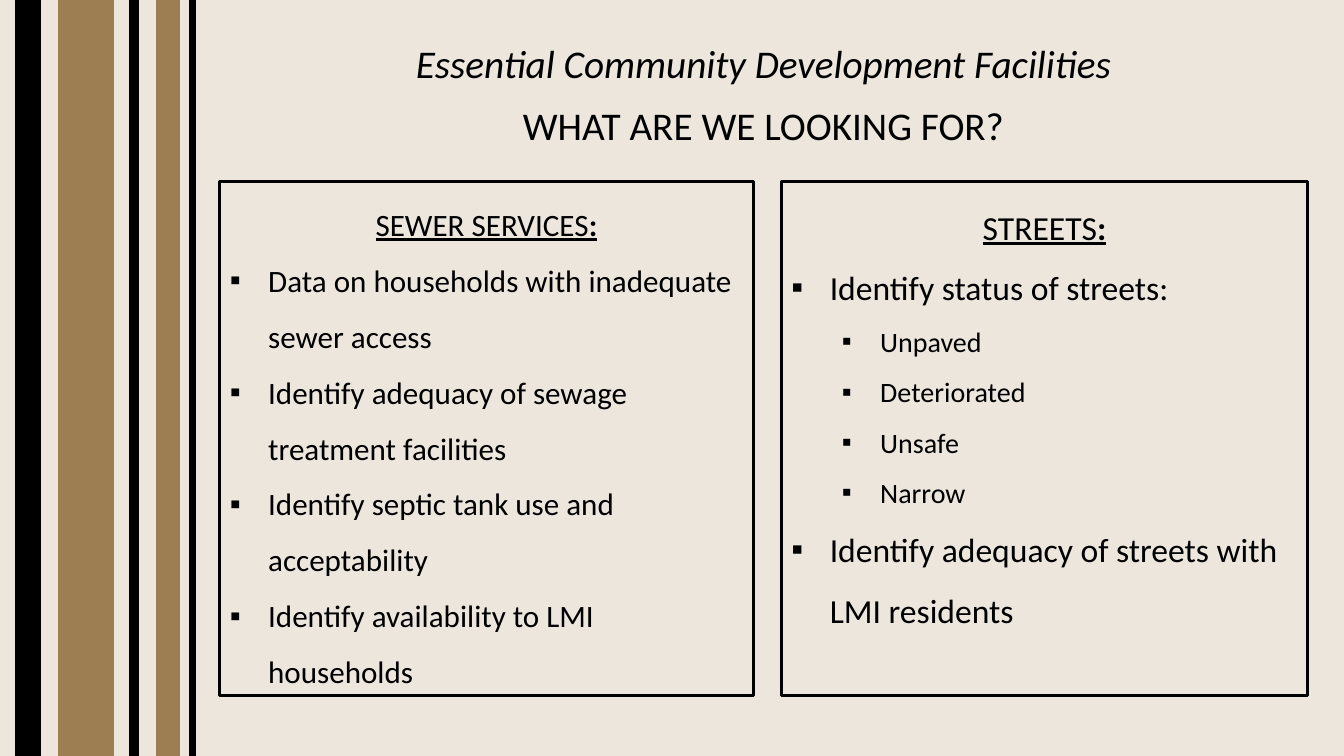
from lxml.etree import SubElement
from pptx import Presentation
from pptx.dml.color import RGBColor
from pptx.enum.shapes import MSO_SHAPE as SHAPE
from pptx.enum.text import MSO_ANCHOR as ANCHOR, MSO_AUTO_SIZE as AUTO, PP_ALIGN as ALIGN
from pptx.oxml.ns import qn
from pptx.util import Pt

PX = 9144  # 100 px to the inch
BLACK, TAN, CREAM = "000000", "9C7E52", "ECE6DD"

BARS = [(16, 24, BLACK), (58, 54, TAN), (129, 8, BLACK), (155, 23, TAN), (188, 6, BLACK)]
TITLE = "Essential Community Development Facilities"
SUBTITLE = "WHAT ARE WE LOOKING FOR?"
TITLE_BOX = (218, 28, 1078, 63)
SUBTITLE_BOX = (218, 90, 1078, 63)
# box, heading, size of each level, items as (level, text)
PANELS = [
    ((218, 180, 529, 510), "SEWER SERVICES", (22.2,), [
        (0, "Data on households with inadequate sewer access"),
        (0, "Identify adequacy of sewage treatment facilities"),
        (0, "Identify septic tank use and acceptability"),
        (0, "Identify availability to LMI households"),
    ]),
    ((775, 180, 522, 510), "STREETS", (24, 20), [
        (0, "Identify status of streets:"),
        (1, "Unpaved"),
        (1, "Deteriorated"),
        (1, "Unsafe"),
        (1, "Narrow"),
        (0, "Identify adequacy of streets with LMI residents"),
    ]),
]


def rgb(color):
    return RGBColor.from_string(color)


def place(s, box):
    s.left, s.top, s.width, s.height = (v * PX for v in box)


def add_run(p, text, size, bold=False, italic=False, underline=False):
    r = p.add_run()
    r.text = text
    f = r.font
    f.name, f.size, f.bold, f.italic, f.underline = "Calibri", Pt(size), bold, italic, underline
    f.color.rgb = rgb(BLACK)


def set_paragraph(p, spacing, align=ALIGN.LEFT):
    p.alignment, p.line_spacing = align, spacing
    p.space_before = p.space_after = Pt(0)


def set_bullet(p, char=None, indent=0, hanging=0):
    """Set bullet and indents in px; without a char the bullet is removed."""
    pPr = p._p.get_or_add_pPr()
    pPr.set("marL", str(indent * PX))
    pPr.set("indent", str(-hanging * PX))
    if char:
        SubElement(pPr, qn("a:buFont")).set("typeface", "Arial")
        SubElement(pPr, qn("a:buChar")).set("char", char)
    else:
        SubElement(pPr, qn("a:buNone"))


def prepare_frame(s, anchor):
    tf = s.text_frame
    tf.word_wrap, tf.auto_size, tf.vertical_anchor = True, AUTO.NONE, anchor
    return tf


def fill_title(s, box, text, italic=False):
    place(s, box)
    p = prepare_frame(s, ANCHOR.BOTTOM).paragraphs[0]
    set_paragraph(p, 0.9, ALIGN.CENTER)
    add_run(p, text, 28, italic=italic)


def fill_panel(s, box, heading, sizes, items):
    place(s, box)
    s.line.color.rgb, s.line.width = rgb(BLACK), Pt(2.25)
    tf = prepare_frame(s, ANCHOR.TOP)
    p = tf.paragraphs[0]
    set_paragraph(p, 1.5, ALIGN.CENTER)
    set_bullet(p)
    add_run(p, heading, sizes[0], underline=True)
    add_run(p, ":", sizes[0], bold=True, underline=True)
    for level, text in items:
        p = tf.add_paragraph()
        p.level = level
        set_paragraph(p, 1.5)
        set_bullet(p, "▪", 38 + 50 * level, 38)
        add_run(p, text, sizes[level])


def add_bar(slide, left, width, color):
    s = slide.shapes.add_shape(SHAPE.RECTANGLE, left * PX, 0, width * PX, 750 * PX)
    s.shadow.inherit = False
    s.fill.solid()
    s.fill.fore_color.rgb = s.line.color.rgb = rgb(color)
    s.line.width = Pt(1)


def main():
    prs = Presentation()
    prs.slide_width, prs.slide_height = 1333 * PX, 750 * PX
    slide = prs.slides.add_slide(prs.slide_layouts.get_by_name("Two Content"))
    slide.background.fill.solid()
    slide.background.fill.fore_color.rgb = rgb(CREAM)
    for bar in BARS:
        add_bar(slide, *bar)
    title, *bodies = slide.placeholders
    fill_title(title, TITLE_BOX, TITLE, italic=True)
    fill_title(slide.shapes.add_textbox(0, 0, 0, 0), SUBTITLE_BOX, SUBTITLE)
    for body, panel in zip(bodies, PANELS):
        fill_panel(body, *panel)
    prs.save("out.pptx")


if __name__ == "__main__":
    main()
